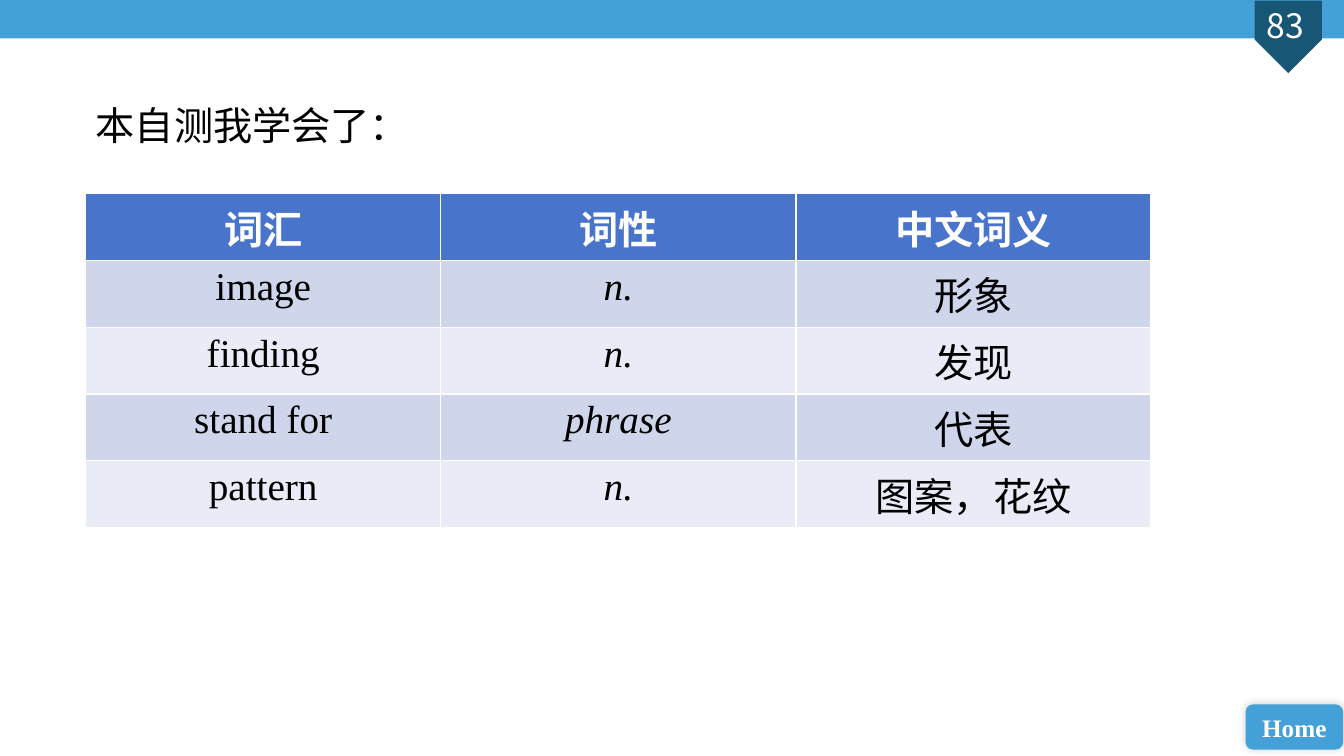
from lxml import etree
from pptx import Presentation
from pptx.dml.color import RGBColor
from pptx.enum import shapes, text
from pptx.oxml import ns
from pptx.util import Cm, Pt

SKY = RGBColor(0x43, 0xA1, 0xD8)
NAVY = RGBColor(0x18, 0x56, 0x75)
HEADER_BLUE = RGBColor(0x48, 0x74, 0xCB)
BAND_DARK = RGBColor(0xCF, 0xD6, 0xEC)
BAND_LIGHT = RGBColor(0xE9, 0xEB, 0xF6)
WHITE = RGBColor(0xFF, 0xFF, 0xFF)
BLACK = RGBColor(0x00, 0x00, 0x00)

CHINESE_FONT = "Noto Sans CJK SC"
WORDS = [
    ("词汇", "词性", "中文词义"),
    ("image", "n.", "形象"),
    ("finding", "n.", "发现"),
    ("stand for", "phrase", "代表"),
    ("pattern", "n.", "图案，花纹"),
]


def write(frame, content, color, align=text.PP_ALIGN.CENTER, **font_format):
    """Fill a text frame with one formatted run."""
    paragraph = frame.paragraphs[0]
    paragraph.alignment = align
    run = paragraph.add_run()
    run.text = content
    run.font.color.rgb = color
    for attribute, value in font_format.items():
        setattr(run.font, attribute, value)
    east_asian = etree.SubElement(run.font._element, ns.qn("a:ea"))
    east_asian.set("typeface", CHINESE_FONT)


def set_frame(frame):
    """Keep the box size fixed and centre its text vertically."""
    settings = {
        "word_wrap": True,
        "auto_size": text.MSO_AUTO_SIZE.NONE,
        "vertical_anchor": text.MSO_ANCHOR.MIDDLE,
    }
    for attribute, value in settings.items():
        setattr(frame, attribute, value)


def add_block(slide, preset, box, color):
    block = slide.shapes.add_shape(preset, *map(Cm, box))
    block.shadow.inherit = False
    block.fill.solid()
    block.fill.fore_color.rgb = color
    block.line.fill.background()
    return block


def add_soft_shadow(block):
    effects = block._element.spPr.find(ns.qn("a:effectLst"))
    shadow = etree.SubElement(effects, ns.qn("a:outerShdw"),
                              blurRad=str(Pt(6)), dist="0", dir="18900000")
    tint = etree.SubElement(shadow, ns.qn("a:srgbClr"), val="000000")
    etree.SubElement(tint, ns.qn("a:alpha"), val="20000")


def add_page_marker(slide):
    add_block(slide, shapes.MSO_SHAPE.RECTANGLE, (0, 0, 33.87, 0.97), SKY)
    ribbon = add_block(slide, shapes.MSO_SHAPE.PENTAGON,
                       (31.55, 0.08, 1.83, 1.7), NAVY)
    ribbon.rotation = 90
    number = slide.shapes.add_textbox(Cm(31.14), 0, Cm(2.49), Cm(1.27))
    set_frame(number.text_frame)
    write(number.text_frame, "83", WHITE, name=CHINESE_FONT, size=Pt(24))


def add_home_button(slide):
    button = add_block(slide, shapes.MSO_SHAPE.ROUNDED_RECTANGLE,
                       (31.39, 17.75, 2.46, 1.14), SKY)
    add_soft_shadow(button)
    set_frame(button.text_frame)
    write(button.text_frame, "Home", WHITE,
          name="Times New Roman", size=Pt(18), bold=True)


def add_word_table(slide):
    holder = slide.shapes.add_table(len(WORDS), len(WORDS[0]), Cm(2.16),
                                    Cm(4.88), Cm(26.85), Cm(11.5))
    table = holder.table
    for column in table.columns:
        column.width = Cm(8.95)
    for row in table.rows:
        row.height = Cm(1.44)
    holder.height = Cm(11.5)
    for r, words in enumerate(WORDS):
        header = r == 0
        band = HEADER_BLUE if header else (BAND_LIGHT, BAND_DARK)[r % 2]
        for c, word in enumerate(words):
            cell = table.cell(r, c)
            cell.fill.solid()
            cell.fill.fore_color.rgb = band
            write(cell.text_frame, word, WHITE if header else BLACK,
                  name="Times New Roman", size=Pt(28), bold=header,
                  italic=c == 1 and not header)


def place_title(slide):
    title = slide.shapes.title
    position = {"left": 2.16, "top": 2.41, "width": 9.83, "height": 1.45}
    for attribute, value in position.items():
        setattr(title, attribute, Cm(value))
    set_frame(title.text_frame)
    write(title.text_frame, "本自测我学会了：", BLACK,
          text.PP_ALIGN.LEFT, name="Calibri", size=Pt(28))


def main():
    deck = Presentation()
    deck.slide_width, deck.slide_height = Cm(33.87), Cm(19.05)
    slide = deck.slides.add_slide(deck.slide_layouts.get_by_name("Title Only"))
    add_page_marker(slide)
    add_home_button(slide)
    add_word_table(slide)
    place_title(slide)
    deck.save("out.pptx")


if __name__ == "__main__":
    main()
